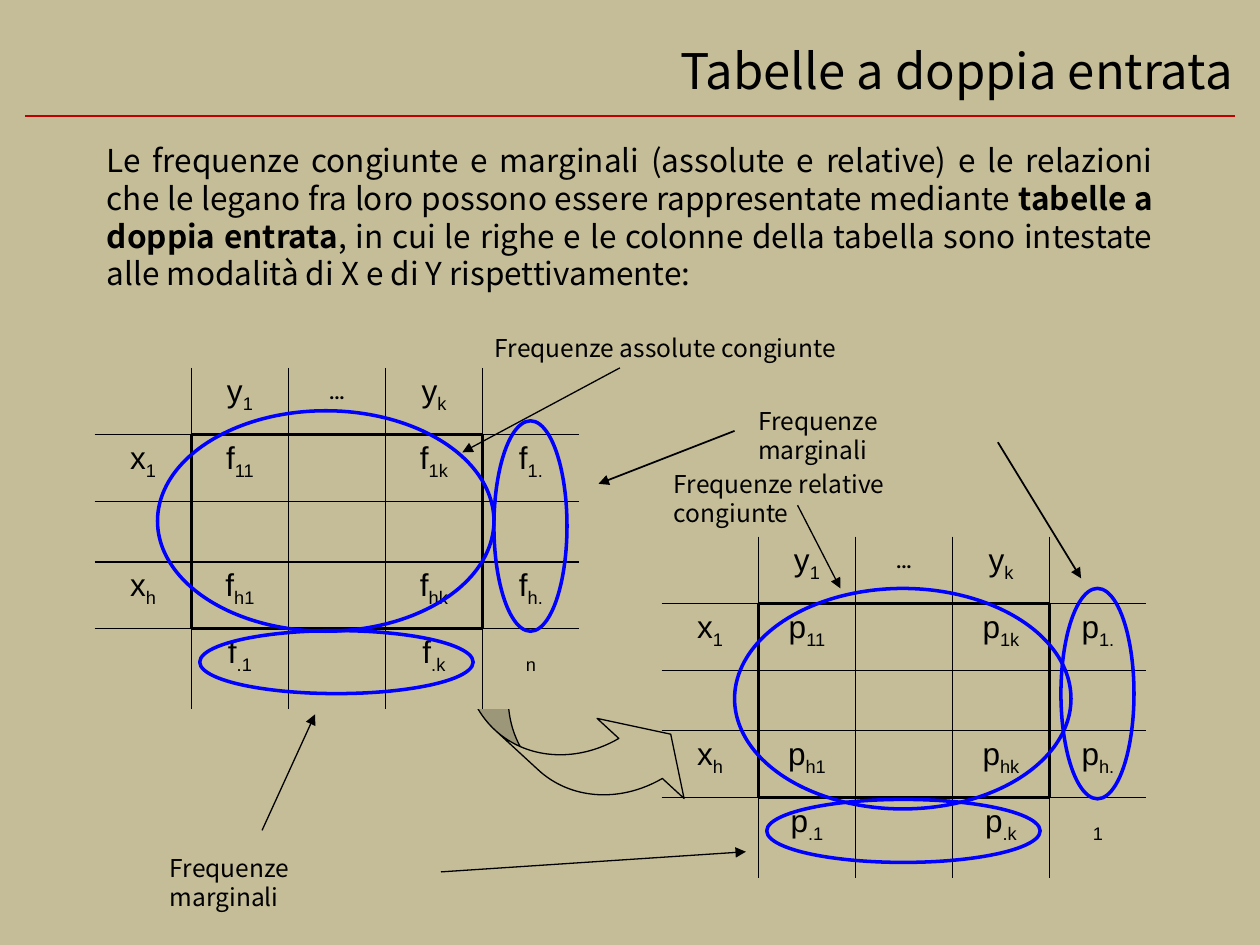
from dataclasses import dataclass

from pptx import Presentation
from pptx.dml.color import RGBColor
from pptx.enum.shapes import MSO_CONNECTOR as Connector, MSO_SHAPE as Shape
from pptx.enum.text import MSO_ANCHOR as Anchor, PP_ALIGN as Align
from pptx.oxml.ns import qn
from pptx.util import Emu, Pt
from lxml.etree import SubElement, Element

EMU_PER_PX = 9144  # 100 px to the inch
COLORS = {"paper": "C4BD97", "ink": "000000", "ring": "0000FF", "rule": "C00000"}
SANS, ARIAL, KARLA = "Noto Sans CJK KR", "Arial", "Karla"
NO_STYLE = "{2D5ABB26-0587-4C30-8999-92F81FD0307C}"
COLUMN_WIDTH = 77
ROW_HEIGHTS = (53, 53, 48, 53, 64)


@dataclass
class Box:
    left: int
    top: int
    width: int
    height: int
    rotation: float = 0


@dataclass
class Arrow:
    start: tuple[int, int]
    end: tuple[int, int]
    weight: float = 0.75


@dataclass
class Label:
    box: Box
    text: str


@dataclass
class FrequencyTable:
    left: int
    top: int
    symbol: str
    total: str


RELATIVE = FrequencyTable(525, 426, "p", "1")
ABSOLUTE = FrequencyTable(75, 292, "f", "n")

RINGS = [
    Box(392, 334, 58, 167), Box(842, 467, 58, 167),  # row margins
    Box(242, 417, 50, 217, 90), Box(692, 551, 50, 217, 90),  # column margins
    Box(171, 280, 175, 267, 90), Box(629, 421, 175, 267, 90),  # joint frequencies
]
ARROWS = [
    Arrow((583, 342), (475, 384), 1), Arrow((792, 351), (858, 459), 1),
    Arrow((208, 659), (250, 567)), Arrow((350, 692), (592, 676)),
    Arrow((492, 292), (367, 359)), Arrow((633, 401), (667, 467)),
]
LABELS = [
    Label(Box(125, 672, 200, 34), "Frequenze marginali"),
    Label(Box(592, 317, 200, 34), "Frequenze marginali"),
    Label(Box(383, 259, 293, 34), "Frequenze assolute congiunte"),
    Label(Box(525, 367, 277, 34), "Frequenze relative congiunte"),
]


def px(length: int) -> Emu:
    return Emu(length * EMU_PER_PX)


def color(name: str) -> RGBColor:
    return RGBColor.from_string(COLORS[name])


def frame_of(box: Box) -> list[Emu]:
    return [px(length) for length in (box.left, box.top, box.width, box.height)]


def write_text(frame, text: str, *, size: float = 14, font: str = SANS, bold: bool = False,
               align=Align.LEFT, before: float = 0, baseline: int = 0) -> None:
    """Append one formatted run to the first paragraph of a text frame."""
    paragraph = frame.paragraphs[0]
    paragraph.alignment = align
    paragraph.space_before = Pt(before)
    run = paragraph.add_run()
    run.text = text
    run.font.size, run.font.name, run.font.bold = Pt(size), font, bold
    run.font.color.rgb = color("ink")
    properties = run.font._element
    for tag in ("a:ea", "a:cs"):
        SubElement(properties, qn(tag), typeface=font)
    if baseline:
        properties.set("baseline", str(baseline * 1000))


def add_text_box(slide, box: Box):
    frame = slide.shapes.add_textbox(*frame_of(box)).text_frame
    frame.word_wrap = True
    return frame


def add_line(slide, line: Arrow, line_color: str = "ink", head: bool = True) -> None:
    points = [px(value) for value in (*line.start, *line.end)]
    connector = slide.shapes.add_connector(Connector.STRAIGHT, *points)
    connector.line.color.rgb = color(line_color)
    connector.line.width = Pt(line.weight)
    if head:
        SubElement(connector.line._get_or_add_ln(), qn("a:tailEnd"), type="triangle")
    SubElement(connector._element.spPr, qn("a:effectLst"))


def add_outline(slide, preset, box: Box, line_color: str, weight: float):
    shape = slide.shapes.add_shape(preset, *frame_of(box))
    shape.rotation = box.rotation
    shape.shadow.inherit = False
    shape.fill.background()
    shape.line.color.rgb = color(line_color)
    shape.line.width = Pt(weight)
    return shape


def set_borders(cell, row: int, column: int) -> None:
    """Thin inner grid, with a thick frame around the 3 by 3 core."""
    in_rows, in_columns = 1 <= row <= 3, 1 <= column <= 3
    # side: (index of the grid line, whether it runs along the core)
    sides = {"L": (column, in_rows), "R": (column + 1, in_rows),
             "T": (row, in_columns), "B": (row + 1, in_columns)}
    properties = cell._tc.get_or_add_tcPr()
    for position, (side, (index, along_core)) in enumerate(sides.items()):
        border = Element(qn(f"a:ln{side}"))
        if index in (0, 5):
            SubElement(border, qn("a:noFill"))
        else:
            weight = 2.25 if along_core and index in (1, 4) else 1
            border.set("w", str(Pt(weight)))
            fill = SubElement(border, qn("a:solidFill"))
            SubElement(fill, qn("a:srgbClr"), val=COLORS["ink"])
        properties.insert(position, border)


def add_frequency_table(slide, spec_table: FrequencyTable) -> None:
    symbol = spec_table.symbol
    # base and subscript are parted by an underscore
    texts = [
        ["", "y_1", "…", "y_k", ""],
        ["x_1", f"{symbol}_11", "", f"{symbol}_1k", f"{symbol}_1."],
        [""] * 5,
        ["x_h", f"{symbol}_h1", "", f"{symbol}_hk", f"{symbol}_h."],
        ["", f"{symbol}_.1", "", f"{symbol}_.k", f"_{spec_table.total}"],
    ]
    box = Box(spec_table.left, spec_table.top, 5 * COLUMN_WIDTH, sum(ROW_HEIGHTS))
    table = slide.shapes.add_table(5, 5, *frame_of(box)).table
    table.first_row = table.horz_banding = False
    table._tbl.tblPr.find(qn("a:tableStyleId")).text = NO_STYLE
    for column in table.columns:
        column.width = px(COLUMN_WIDTH)
    for row, height in zip(table.rows, ROW_HEIGHTS):
        row.height = px(height)
    for row, row_texts in enumerate(texts):
        for column, text in enumerate(row_texts):
            cell = table.cell(row, column)
            if row >= 3 and column >= 3:
                cell.fill.solid()
                cell.fill.fore_color.rgb = color("paper")
            else:
                cell.fill.background()
            set_borders(cell, row, column)
            size, font = (16, KARLA) if text == "…" else (18, ARIAL)
            for part, baseline in zip(text.split("_"), (0, -25)):
                if part:
                    write_text(cell.text_frame, part, size=size, font=font,
                               align=Align.CENTER, before=3.6, baseline=baseline)


def main() -> None:
    presentation = Presentation()
    presentation.slide_width, presentation.slide_height = px(1000), px(750)
    slide = presentation.slides.add_slide(presentation.slide_layouts[6])
    slide.background.fill.solid()
    slide.background.fill.fore_color.rgb = color("paper")

    # Title and rule
    title = add_text_box(slide, Box(88, 21, 900, 69))
    title.vertical_anchor = Anchor.MIDDLE
    write_text(title, "Tabelle a doppia entrata", size=28, align=Align.RIGHT)
    add_line(slide, Arrow((20, 92), (980, 92), 1), "rule", head=False)

    # Tables, with the curved arrow from absolute to relative frequencies
    add_frequency_table(slide, RELATIVE)
    curve = add_outline(slide, Shape.CURVED_RIGHT_ARROW, Box(404, 453, 92, 233, 312.6), "ink", 0.75)
    curve.fill.solid()
    curve.fill.fore_color.rgb = color("paper")
    for index, value in enumerate((0.51, 1.02, 0.33)):
        curve.adjustments[index] = value
    add_frequency_table(slide, ABSOLUTE)

    # Introduction
    body = add_text_box(slide, Box(75, 107, 850, 131))
    for text, bold in (
        ("Le frequenze congiunte e marginali (assolute e relative) e le relazioni che le legano "
         "fra loro possono essere rappresentate mediante ", False),
        ("tabelle a doppia entrata", True),
        (", in cui le righe e le colonne della tabella sono intestate alle modalità di X e di Y "
         "rispettivamente:", False),
    ):
        write_text(body, text, size=18, bold=bold, align=Align.JUSTIFY)

    # Rings, arrows and labels
    for ring in RINGS:
        add_outline(slide, Shape.OVAL, ring, "ring", 2)
    for arrow in ARROWS:
        add_line(slide, arrow)
    for label in LABELS:
        write_text(add_text_box(slide, label.box), label.text)

    presentation.save("out.pptx")


if __name__ == "__main__":
    main()
